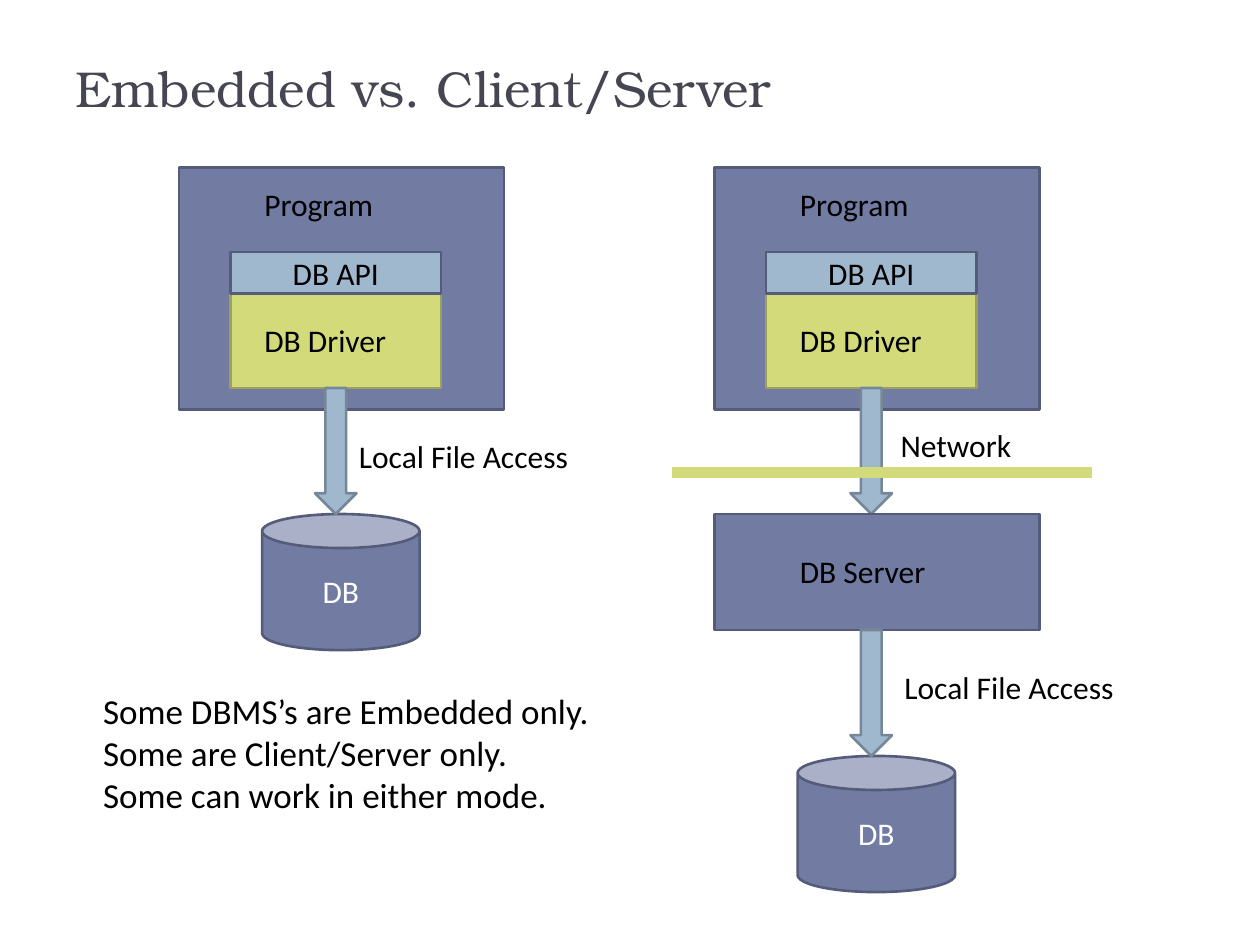
import pptx
import pptx.util
import pptx.dml.color
import pptx.enum.shapes
import pptx.enum.text
import pptx.oxml.ns
import lxml.etree

Inches = pptx.util.Inches
Pt = pptx.util.Pt
RGBColor = pptx.dml.color.RGBColor
Shape = pptx.enum.shapes.MSO_SHAPE
Anchor = pptx.enum.text.MSO_ANCHOR
Align = pptx.enum.text.PP_ALIGN

INDIGO = RGBColor(0x72, 0x7C, 0xA3)
INDIGO_EDGE = RGBColor(0x54, 0x5C, 0x79)
LIME = RGBColor(0xD2, 0xDA, 0x7A)
LIME_EDGE = RGBColor(0x9B, 0xA1, 0x5A)
SKY = RGBColor(0x9F, 0xB8, 0xCD)
SKY_EDGE = RGBColor(0x76, 0x88, 0x98)
SLATE = RGBColor(0x46, 0x46, 0x53)
BLACK = RGBColor(0, 0, 0)
WHITE = RGBColor(0xFF, 0xFF, 0xFF)

deck = pptx.Presentation()
deck.slide_width = Inches(10)
deck.slide_height = Inches(7.5)
page = deck.slides.add_slide(deck.slide_layouts[6])


def add_block(kind, left, top, width, height, fill, edge, text="", color=BLACK):
    block = page.shapes.add_shape(
        kind, Inches(left), Inches(top), Inches(width), Inches(height))
    block.shadow.inherit = False
    block.fill.solid()
    block.fill.fore_color.rgb = fill
    block.line.color.rgb = edge
    block.line.width = Pt(1.5)
    if text:
        block.text_frame.vertical_anchor = Anchor.MIDDLE
        para = block.text_frame.paragraphs[0]
        para.alignment = Align.CENTER
        span = para.add_run()
        span.text = text
        span.font.name = "Calibri"
        span.font.size = Pt(18)
        span.font.color.rgb = color
    return block


def add_label(left, top, width, height, lines, size=18, font="Calibri", color=BLACK):
    box = page.shapes.add_textbox(
        Inches(left), Inches(top), Inches(width), Inches(height))
    frame = box.text_frame
    frame.word_wrap = False
    for index, line in enumerate(lines):
        para = frame.add_paragraph() if index else frame.paragraphs[0]
        span = para.add_run()
        span.text = line
        span.font.name = font
        span.font.size = Pt(size)
        span.font.color.rgb = color
    return box


title = add_label(0.5, 0.33, 9, 1.08, ["Embedded vs. Client/Server"],
                  28.8, "TeX Gyre Bonum", SLATE)
title.text_frame.word_wrap = True
title.text_frame.vertical_anchor = Anchor.BOTTOM
title.text_frame.margin_bottom = Inches(0.48)

for left, can_top in ((1.42, 4.08), (5.67, 6)):
    add_block(Shape.CAN, left + 0.66, can_top, 1.25, 1.08,
              INDIGO, INDIGO_EDGE, "DB", WHITE)
    add_block(Shape.RECTANGLE, left, 1.33, 2.58, 1.92, INDIGO, INDIGO_EDGE)
    add_label(left + 0.58, 1.42, 1.18, 0.4, ["Program"])
    add_block(Shape.RECTANGLE, left + 0.41, 2.33, 1.67, 0.75, LIME, LIME_EDGE)
    add_label(left + 0.58, 2.5, 1.34, 0.4, ["DB Driver"])
    add_block(Shape.RECTANGLE, left + 0.41, 2, 1.67, 0.33,
              SKY, INDIGO_EDGE, "DB API")
    add_block(Shape.DOWN_ARROW, left + 1.08, 3.08, 0.33, 1, SKY, SKY_EDGE)

add_block(Shape.RECTANGLE, 5.67, 4.08, 2.58, 0.92, INDIGO, INDIGO_EDGE)
add_label(6.25, 4.33, 1.33, 0.4, ["DB Server"])
add_block(Shape.DOWN_ARROW, 6.75, 5, 0.33, 1, SKY, SKY_EDGE)

add_label(7.05, 3.33, 1.2, 0.4, ["Network"])
for left, top in ((7.08, 5.25), (2.75, 3.42)):
    add_label(left, top, 2.1, 0.4, ["Local File Access"])
add_label(0.72, 5.42, 4.53, 1.11, [
    "Some DBMS’s are Embedded only.",
    "Some are Client/Server only.",
    "Some can work in either mode.",
], 20)

network = page.shapes.add_connector(
    pptx.enum.shapes.MSO_CONNECTOR.STRAIGHT,
    Inches(5.33), Inches(3.75), Inches(8.67), Inches(3.75))
network.line.color.rgb = LIME
network.line.width = Pt(6)
lxml.etree.SubElement(network._element.spPr, pptx.oxml.ns.qn("a:effectLst"))

deck.save("out.pptx")
